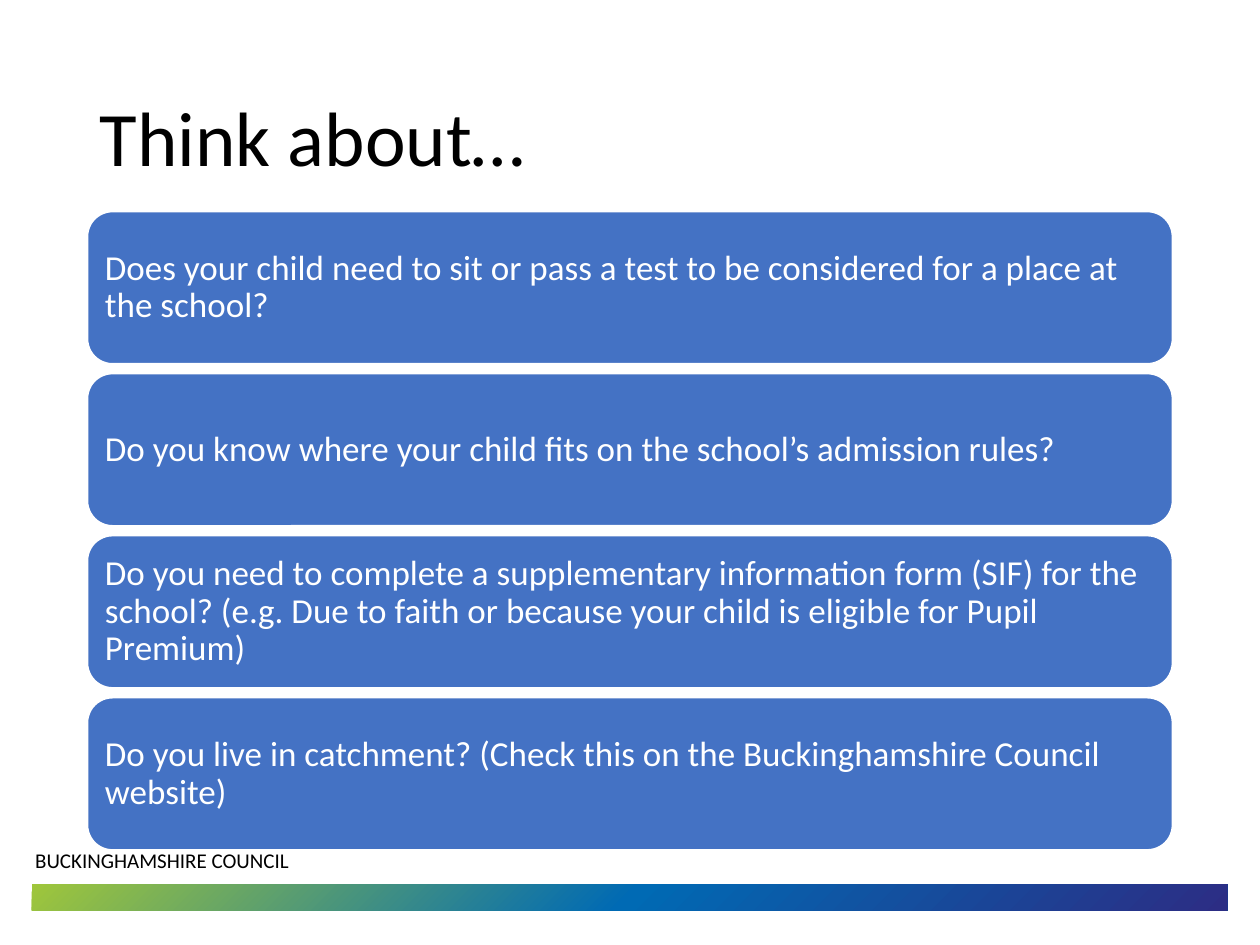
from lxml import etree
from pptx import Presentation
from pptx.dml.color import RGBColor
from pptx.enum.shapes import MSO_SHAPE
from pptx.enum.text import MSO_ANCHOR, PP_ALIGN
from pptx.oxml.ns import qn
from pptx.util import Pt

RECT, ROUND = MSO_SHAPE.RECTANGLE, MSO_SHAPE.ROUNDED_RECTANGLE
MIDDLE, LEFT = MSO_ANCHOR.MIDDLE, PP_ALIGN.LEFT
TITLE_ONLY = 5
FONT = "Calibri"
COLORS = {"black": "000000", "white": "FFFFFF", "card": "4472C4",
          "green": "9FC63B", "blue": "006AB4", "purple": "2C2D84"}
QUESTIONS = [
    "Does your child need to sit or pass a test to be considered for a place at the school?",
    "Do you know where your child fits on the school’s admission rules?",
    "Do you need to complete a supplementary information form (SIF) for the school? "
    "(e.g. Due to faith or because your child is eligible for Pupil Premium)",
    "Do you live in catchment? (Check this on the Buckinghamshire Council website)",
]
CARD_LEFT, CARD_TOP, CARD_WIDTH, CARD_HEIGHT, CARD_PITCH = 49.7, 120.6, 620.6, 87.6, 92.6


def rgb(name):
    """Return the named colour."""
    return RGBColor.from_string(COLORS[name])


def write(sp, text, size, color, spacing=None, **frame):
    """Write one left-aligned paragraph and apply text frame settings."""
    tf = sp.text_frame
    for name, value in {"word_wrap": True, **frame}.items():
        setattr(tf, name, value)
    p = tf.paragraphs[0]
    p.alignment = LEFT
    if spacing:
        p.line_spacing = spacing
    r = p.add_run()
    r.text = text
    for name, value in {"name": FONT, "size": Pt(size), "bold": False}.items():
        setattr(r.font, name, value)
    r.font.color.rgb = rgb(color)


def add_title(s, text):
    """Place and fill the title placeholder."""
    sp = s.shapes.title
    box = {"left": 49.7, "top": 28.8, "width": 620.6, "height": 104.4}
    for name, value in box.items():
        setattr(sp, name, Pt(value))
    write(sp, text, 44, "black", 0.9, vertical_anchor=MIDDLE)


def add_card(s, row, text):
    """Add one rounded question card."""
    sp = s.shapes.add_shape(ROUND, Pt(CARD_LEFT), Pt(CARD_TOP + row * CARD_PITCH),
                            Pt(CARD_WIDTH), Pt(CARD_HEIGHT))
    sp.shadow.inherit = False
    sp.fill.solid()
    sp.fill.fore_color.rgb = rgb("card")
    sp.line.color.rgb = rgb("white")
    sp.line.width = Pt(1.5)
    margins = {f"margin_{side}": Pt(6) for side in ("left", "top", "right", "bottom")}
    write(sp, text, 20, "white", 0.9, vertical_anchor=MIDDLE, **margins)


def add_gradient_bar(s, names):
    """Add the footer bar with evenly spaced gradient stops."""
    sp = s.shapes.add_shape(RECT, Pt(18), Pt(505.4), Pt(683.3), Pt(14.8))
    sp.shadow.inherit = False
    sp.line.fill.background()
    sp.fill.gradient()
    sp.fill.gradient_angle = 315
    stops = sp.element.spPr.find(qn("a:gradFill")).find(qn("a:gsLst"))
    for stop in list(stops):
        stops.remove(stop)
    for i, name in enumerate(names):
        stop = etree.SubElement(stops, qn("a:gs"), pos=str(i * 100000 // (len(names) - 1)))
        etree.SubElement(stop, qn("a:srgbClr"), val=COLORS[name])


def add_footer(s, text):
    """Add the footer label."""
    sp = s.shapes.add_textbox(Pt(13), Pt(481), Pt(346.3), Pt(21.6))
    write(sp, text, 12, "black")


def main():
    """Build and save the slide."""
    prs = Presentation()
    prs.slide_width, prs.slide_height = Pt(720), Pt(540)
    s = prs.slides.add_slide(prs.slide_layouts[TITLE_ONLY])
    add_gradient_bar(s, ["green", "blue", "purple"])
    add_footer(s, "BUCKINGHAMSHIRE COUNCIL")
    add_title(s, "Think about…")
    for row, question in enumerate(QUESTIONS):
        add_card(s, row, question)
    prs.save("out.pptx")


if __name__ == "__main__":
    main()
